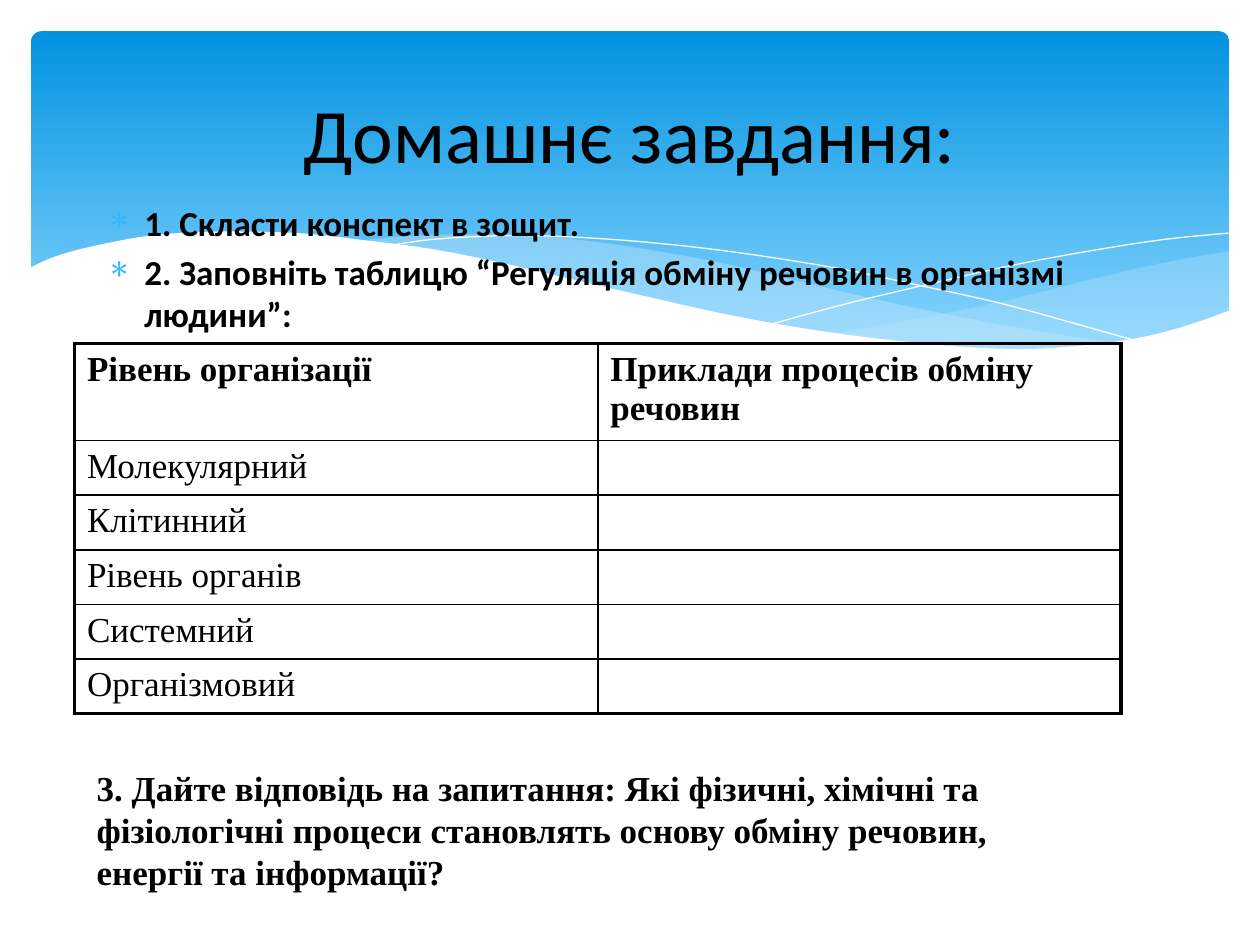
from lxml.etree import SubElement
from pptx import Presentation
from pptx.dml.color import RGBColor
from pptx.enum.shapes import MSO_SHAPE
from pptx.enum.text import MSO_ANCHOR, PP_ALIGN
from pptx.oxml import parse_xml
from pptx.oxml.ns import nsdecls, qn
from pptx.util import Cm, Pt

BLACK = RGBColor(0x00, 0x00, 0x00)
WHITE = RGBColor(0xFF, 0xFF, 0xFF)
SKY_TOP = RGBColor(0x02, 0x93, 0xE0)
SKY_BOTTOM = RGBColor(0x83, 0xD3, 0xFE)
PALE = RGBColor(0xC6, 0xE7, 0xFC)
BULLET = RGBColor(0x31, 0xB6, 0xFD)

TITLE = "Домашнє завдання:"
TASKS = [
    "1. Скласти конспект в зощит.",
    "2. Заповніть таблицю “Регуляція обміну речовин в організмі людини”:",
]
TABLE = [
    ("Рівень організації", "Приклади процесів обміну речовин"),
    ("Молекулярний", ""),
    ("Клітинний", ""),
    ("Рівень органів", ""),
    ("Системний", ""),
    ("Організмовий", ""),
]
QUESTION = ("3. Дайте відповідь на запитання: Які фізичні, хімічні та фізіологічні "
            "процеси становлять основу обміну речовин, енергії та інформації?")

# Wave edges, in hundredths of an inch; each list is one smooth curve
UNIT = Cm(0.0254)
RIGHT_WAVE = [
    [(976, 199), (921, 209), (861, 223), (805, 237), (753, 248), (706, 257), (661, 265)],
    [(661, 265), (705, 271), (757, 276), (803, 278), (854, 276), (897, 270),
     (935, 261), (976, 247)],
]
MIDDLE_WAVE = [
    [(893, 273), (837, 265), (775, 254), (706, 240), (629, 222), (569, 208), (514, 198),
     (465, 191), (420, 187), (380, 186), (328, 187), (286, 191)],
    [(286, 191), (342, 199), (404, 211), (449, 222), (530, 240), (601, 255), (665, 266),
     (722, 274), (773, 277), (818, 278), (857, 277), (893, 273)],
]
FALLING_LINE = [[(309, 195), (344, 190), (401, 187), (450, 188), (510, 192), (582, 200),
                 (665, 213), (727, 226), (795, 241), (868, 261), (907, 272)]]
RISING_LINE = [[(613, 257), (672, 241), (748, 223), (806, 210), (866, 199), (924, 190),
                (975, 185)]]
WHITE_WAVE = [
    [(977, 246), (940, 259), (899, 269), (850, 275), (809, 277), (761, 275), (708, 270),
     (647, 262), (579, 250), (503, 233), (447, 220), (391, 207), (339, 197), (292, 191),
     (250, 186), (211, 184), (161, 184), (119, 187), (85, 193), (59, 199), (40, 205),
     (23, 213)],
    [(23, 329), (977, 329)],
]


def smooth(points, steps=4):
    """Catmull-Rom curve through the points, in EMU."""
    padded = [points[0], *points, points[-1]]
    curve = []
    for a, b, c, d in zip(padded, padded[1:], padded[2:], padded[3:]):
        for t in (i / steps for i in range(steps)):
            curve.append(tuple(
                UNIT * (2 * q + (r - p) * t + (2 * p - 5 * q + 4 * r - s) * t**2
                        + (3 * q - p - 3 * r + s) * t**3) / 2
                for p, q, r, s in zip(a, b, c, d)))
    return curve + [tuple(UNIT * v for v in points[-1])]


def add_wave(curves, fill=None, opacity=100):
    """Filled shape when a fill is given, otherwise an open white hairline."""
    points = [point for curve in curves for point in smooth(curve)]
    builder = slide.shapes.build_freeform(*points[0])
    builder.add_line_segments(points[1:], close=fill is not None)
    s = builder.convert_to_shape()
    s.shadow.inherit = False
    if fill is None:
        s.fill.background()
        s.line.color.rgb = WHITE
        s.line.width = Pt(0)
        return
    s.line.fill.background()
    s.fill.solid()
    s.fill.fore_color.rgb = fill
    if opacity < 100:
        color = s._element.spPr.find(qn("a:solidFill"))[0]
        SubElement(color, qn("a:alpha"), val=str(opacity * 1000))


def add_run(p, text, font, size, bold=False):
    r = p.add_run()
    r.text = text
    r.font.name, r.font.size, r.font.bold = font, Pt(size), bold
    r.font.color.rgb = BLACK


def add_text_frame(left, top, width, height):
    tf = slide.shapes.add_textbox(Cm(left), Cm(top), Cm(width), Cm(height)).text_frame
    tf.word_wrap = True
    return tf


def add_bullet(p):
    pPr = p._p.get_or_add_pPr()
    pPr.set("marL", str(Cm(0.76)))
    pPr.set("indent", str(-Cm(0.76)))
    color = SubElement(pPr, qn("a:buClr"))
    SubElement(color, qn("a:srgbClr"), val=str(BULLET))
    SubElement(pPr, qn("a:buChar"), char="∗")


def set_borders(cell, outer):
    """Black borders: thick on the sides named in outer, thin elsewhere."""
    tcPr = cell._tc.get_or_add_tcPr()
    for i, side in enumerate("LRTB"):
        width = Pt(2.25 if side in outer else 1)
        tcPr.insert(i, parse_xml(
            f'<a:ln{side} {nsdecls("a")} w="{width}"><a:solidFill>'
            f'<a:srgbClr val="{BLACK}"/></a:solidFill></a:ln{side}>'))


prs = Presentation()
prs.slide_width, prs.slide_height = Cm(25.4), Cm(19.05)
slide = prs.slides.add_slide(prs.slide_layouts[6])

# Backdrop
sky = slide.shapes.add_shape(MSO_SHAPE.ROUNDED_RECTANGLE,
                             Cm(0.63), Cm(0.63), Cm(24.15), Cm(6.86))
sky.adjustments[0] = 0.03
sky.shadow.inherit = False
sky.line.fill.background()
sky.fill.gradient()
sky.fill.gradient_angle = 270
for stop, color, position in zip(sky.fill.gradient_stops, (SKY_TOP, SKY_BOTTOM), (0, 0.9)):
    stop.color.rgb, stop.position = color, position
add_wave(RIGHT_WAVE, PALE, 29)
add_wave(MIDDLE_WAVE, PALE, 40)
add_wave(FALLING_LINE)
add_wave(RISING_LINE)
add_wave(WHITE_WAVE, WHITE)

# Title and tasks
tf = add_text_frame(1.27, 0.94, 22.86, 3.48)
tf.vertical_anchor = MSO_ANCHOR.MIDDLE
tf.paragraphs[0].alignment = PP_ALIGN.CENTER
add_run(tf.paragraphs[0], TITLE, "Calibri", 44)

tf = add_text_frame(1.9, 3.94, 21.21, 3.61)
for i, task in enumerate(TASKS):
    p = tf.add_paragraph() if i else tf.paragraphs[0]
    p.space_before = Pt(4)
    add_bullet(p)
    add_run(p, task, "Calibri", 20, bold=True)

# Table
HEADER_HEIGHT, ROW_HEIGHT = 1.82, 1.04
last_row, last_col = len(TABLE) - 1, len(TABLE[0]) - 1
table = slide.shapes.add_table(
    len(TABLE), len(TABLE[0]), Cm(1.5), Cm(6.93), Cm(21.1),
    Cm(HEADER_HEIGHT + last_row * ROW_HEIGHT)).table
table.first_row = table.horz_banding = False
for i, texts in enumerate(TABLE):
    table.rows[i].height = Cm(ROW_HEIGHT if i else HEADER_HEIGHT)
    for j, text in enumerate(texts):
        cell = table.cell(i, j)
        cell.fill.background()
        set_borders(cell, ("T" if i == 0 else "B" if i == last_row else "")
                    + ("L" if j == 0 else "R" if j == last_col else ""))
        if text:
            p = cell.text_frame.paragraphs[0]
            p.space_before = Pt(4)
            add_run(p, text, "Times New Roman", 20, bold=i == 0)

# Question
p = add_text_frame(1.7, 15.32, 20.4, 2.79).paragraphs[0]
p.space_before = Pt(10)
p.line_spacing = Pt(24)
add_run(p, QUESTION, "Times New Roman", 20, bold=True)

prs.save("out.pptx")
